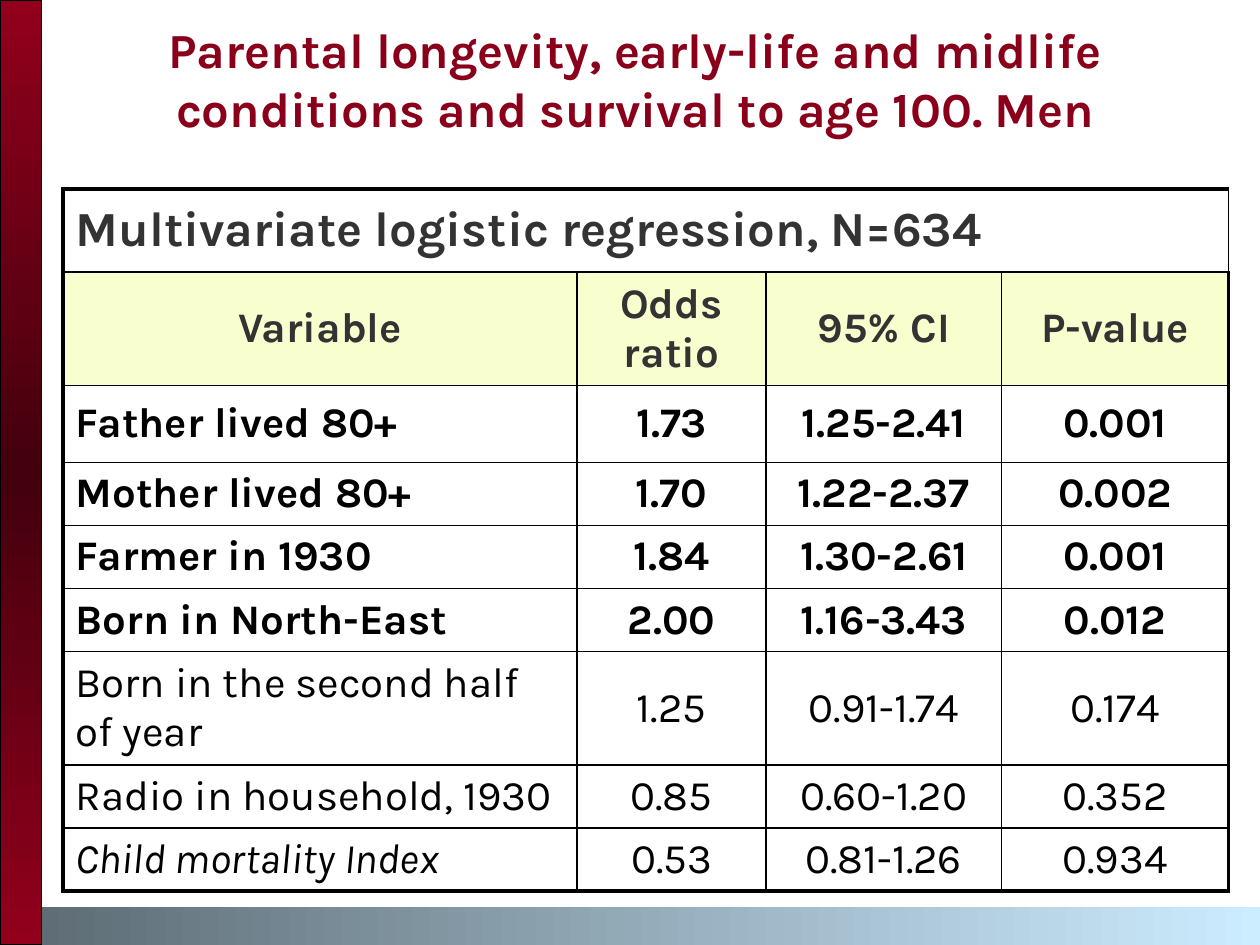
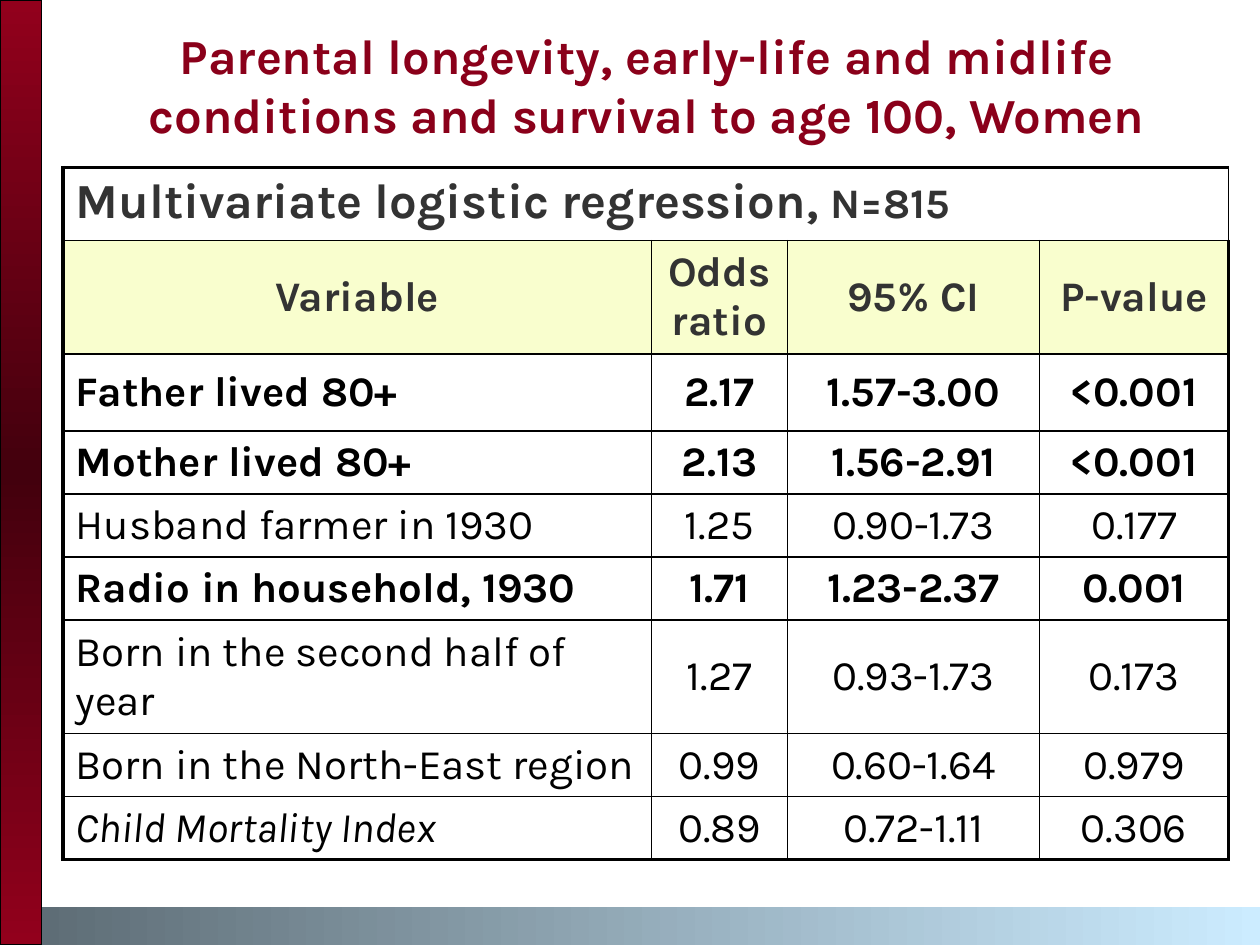
from lxml.etree import SubElement
from pptx import Presentation
from pptx.dml.color import RGBColor
from pptx.enum.shapes import MSO_SHAPE as Preset
from pptx.enum.text import MSO_ANCHOR as Anchor, PP_ALIGN as Align
from pptx.oxml.ns import qn
from pptx.util import Inches, Pt

FONT = "Karla"
COLORS = {
    "title": "8A001A",
    "band_edge": "92001C",
    "band_core": "43000D",
    "footer_dark": "5E6D76",
    "footer_light": "CCECFF",
    "heading": "333333",
    "header_fill": "F9FECE",
    "ink": "000000",
}
HEADERS = ["Variable", "Odds ratio", "95% CI", "P-value"]
THICK, THIN = 2.25, 1

MEN = {
    "title": "Parental longevity, early-life and midlife conditions and survival to age 100. Men",
    "title_box": (0.33, 0, 9.42, 1.25),
    "caption": [("Multivariate logistic regression, N=634", 28)],
    "caption_anchor": Anchor.MIDDLE,
    "table_box": (0.5, 1.5, 9.25, 5.53),
    "columns": [4.08, 1.5, 1.87, 1.8],
    "caption_height": 0.66,
    "rows": [
        ("Father lived 80+", "1.73", "1.25-2.41", "0.001"),
        ("Mother lived 80+", "1.70", "1.22-2.37", "0.002"),
        ("Farmer in 1930", "1.84", "1.30-2.61", "0.001"),
        ("Born in North-East", "2.00", "1.16-3.43", "0.012"),
        ("Born in the second half of year", "1.25", "0.91-1.74", "0.174"),
        ("Radio in household, 1930", "0.85", "0.60-1.20", "0.352"),
        ("Child mortality Index", "0.53", "0.81-1.26", "0.934"),
    ],
}
WOMEN = {
    "title": "Parental longevity, early-life and midlife conditions and survival to age 100, Women",
    "title_box": (0.42, 0.17, 9.42, 1),
    "caption": [("Multivariate logistic regression, ", 28), ("N=815", 24)],
    "caption_anchor": Anchor.TOP,
    "table_box": (0.5, 1.33, 9.25, 5.45),
    "columns": [4.67, 1.08, 2, 1.5],
    "caption_height": 0.58,
    "rows": [
        ("Father lived 80+", "2.17", "1.57-3.00", "<0.001"),
        ("Mother lived 80+", "2.13", "1.56-2.91", "<0.001"),
        ("Husband farmer in 1930", "1.25", "0.90-1.73", "0.177"),
        ("Radio in household, 1930", "1.71", "1.23-2.37", "0.001"),
        ("Born in the second half of year", "1.27", "0.93-1.73", "0.173"),
        ("Born in the North-East region", "0.99", "0.60-1.64", "0.979"),
        ("Child Mortality Index", "0.89", "0.72-1.11", "0.306"),
    ],
}


def write(frame, pieces, color="ink", bold=False, italic=False, align=Align.LEFT, space_before=0):
    para = frame.paragraphs[0]
    para.alignment = align
    if space_before:
        spacing = SubElement(para._p.get_or_add_pPr(), qn("a:spcBef"))
        SubElement(spacing, qn("a:spcPct"), val=str(space_before * 1000))
    for text, size in pieces:
        span = para.add_run()
        span.text = text
        font = span.font
        font.name, font.size, font.bold, font.italic = FONT, Pt(size), bold, italic
        font.color.rgb = RGBColor.from_string(COLORS[color])


def add_band(page, box, stops, angle, outlined=False):
    band = page.shapes.add_shape(Preset.RECTANGLE, *map(Inches, box))
    band.shadow.inherit = False
    band.fill.gradient()
    band.fill.gradient_angle = angle
    stop_list = band._element.spPr.find(".//" + qn("a:gsLst"))
    stop_list.clear()
    for position, color in stops:
        stop = SubElement(stop_list, qn("a:gs"), pos=str(position * 1000))
        SubElement(stop, qn("a:srgbClr"), val=COLORS[color])
    if outlined:
        band.line.color.rgb = RGBColor.from_string(COLORS["ink"])
        band.line.width = Pt(0.75)
    else:
        band.line.fill.background()


def add_bands(page):
    add_band(page, (0, 0, 0.33, 7.5),
             [(0, "band_edge"), (50, "band_core"), (100, "band_edge")], 90, outlined=True)
    add_band(page, (0.33, 7.2, 9.67, 0.3), [(0, "footer_dark"), (100, "footer_light")], 0)


def add_title(page, text, box):
    frame = page.shapes.add_textbox(*map(Inches, box)).text_frame
    frame.word_wrap = True
    frame.vertical_anchor = Anchor.MIDDLE
    write(frame, [(text, 28)], color="title", bold=True, align=Align.CENTER)


def set_borders(cell, **widths):
    properties = cell._tc.get_or_add_tcPr()
    for side in ("L", "R", "T", "B"):
        line = SubElement(properties, qn("a:ln" + side), w=str(Pt(widths[side])))
        fill = SubElement(line, qn("a:solidFill"))
        SubElement(fill, qn("a:srgbClr"), val=COLORS["ink"])


def row_height(label):
    if label.startswith("Father"):
        return 0.61
    return 0.88 if "second half" in label else 0.5


def is_significant(p_value):
    return float(p_value.lstrip("<")) < 0.05


def add_regression_table(page, content, box):
    rows = content["rows"]
    heights = [content["caption_height"], 0.88] + [row_height(row[0]) for row in rows]
    last_row, last_column = len(heights) - 1, len(HEADERS) - 1
    table = page.shapes.add_table(len(heights), len(HEADERS), *map(Inches, box)).table
    table.first_row = table.horz_banding = False
    for column, width in zip(table.columns, content["columns"]):
        column.width = Inches(width)
    for row, height in zip(table.rows, heights):
        row.height = Inches(height)

    for r in range(len(heights)):
        for c in range(len(HEADERS)):
            cell = table.cell(r, c)
            cell.vertical_anchor = Anchor.MIDDLE
            set_borders(cell,
                        L=THICK if c == 0 else THIN, R=THICK if c == last_column else THIN,
                        T=THICK if r == 0 else THIN, B=THICK if r == last_row else THIN)
            if r == 1:
                cell.fill.solid()
                cell.fill.fore_color.rgb = RGBColor.from_string(COLORS["header_fill"])
            else:
                cell.fill.background()

    caption = table.cell(0, 0)
    caption.merge(table.cell(0, last_column))
    caption.vertical_anchor = content["caption_anchor"]
    write(caption.text_frame, content["caption"], color="heading", bold=True, space_before=20)
    for c, header in enumerate(HEADERS):
        write(table.cell(1, c).text_frame, [(header, 24)], color="heading", bold=True,
              align=Align.CENTER, space_before=20)
    for r, row in enumerate(rows, start=2):
        for c, text in enumerate(row):
            write(table.cell(r, c).text_frame, [(text, 24)], bold=is_significant(row[-1]),
                  italic=text.startswith("Child"),
                  align=Align.CENTER if c else Align.LEFT, space_before=20)


def add_results_slide(deck, content):
    page = deck.slides.add_slide(deck.slide_layouts[6])
    add_bands(page)
    add_title(page, content["title"], content["title_box"])
    add_regression_table(page, content, content["table_box"])


def main():
    deck = Presentation()
    deck.slide_width, deck.slide_height = Inches(10), Inches(7.5)
    for content in (MEN, WOMEN):
        add_results_slide(deck, content)
    deck.save("out.pptx")


if __name__ == "__main__":
    main()
